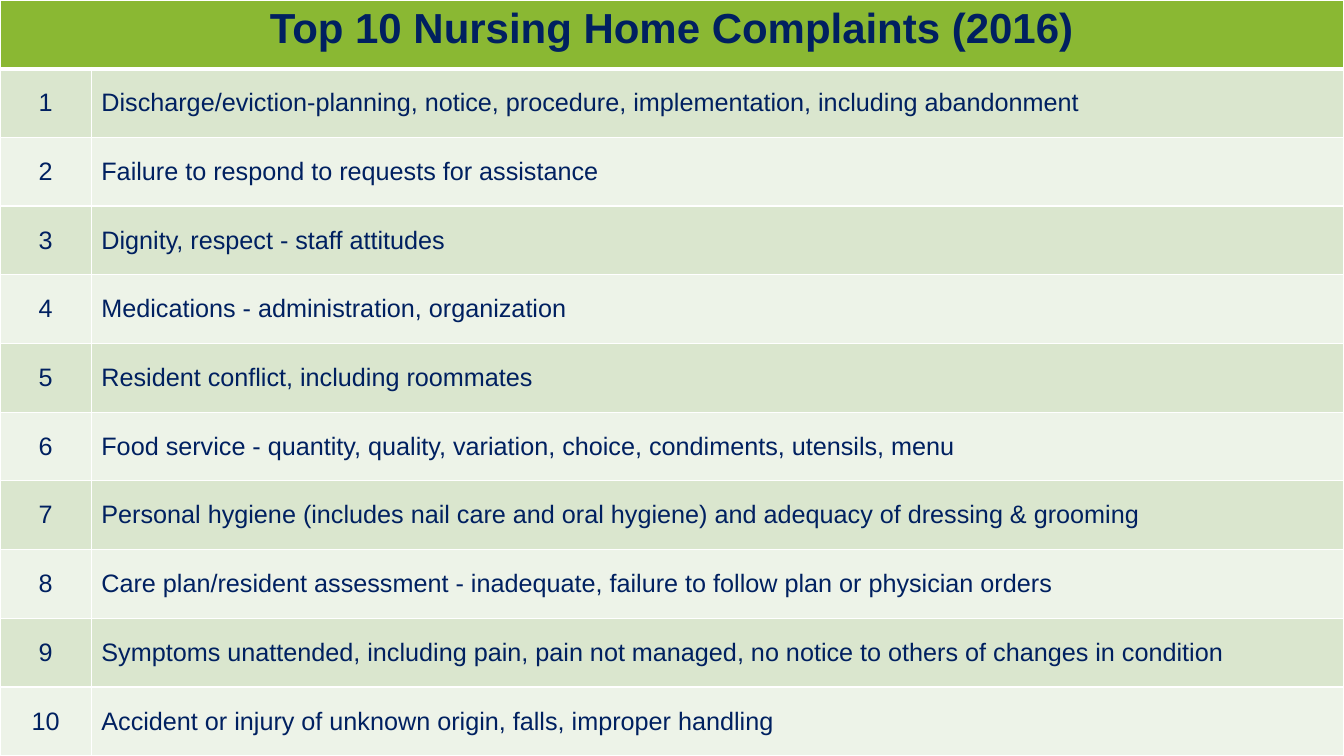
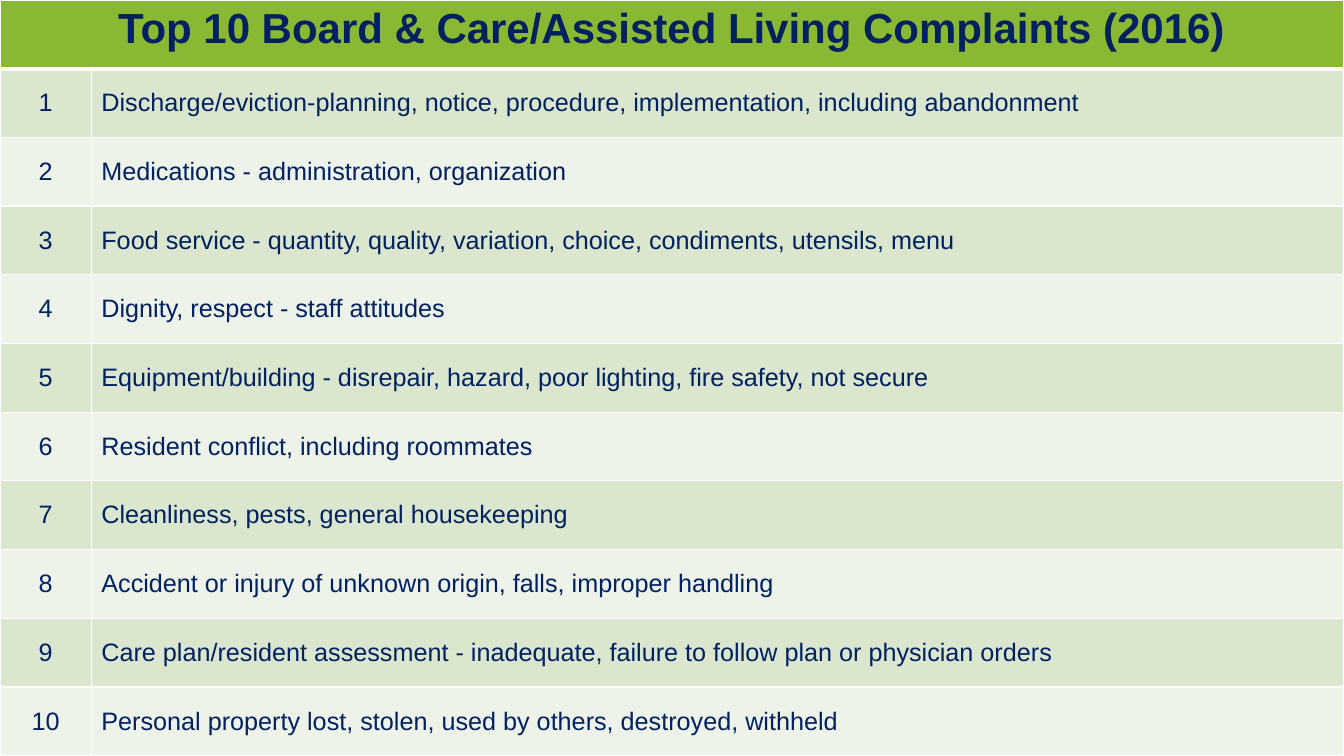
"""Build two slides that rank the most frequent care complaints as full-slide tables."""
from lxml import etree
from pptx import Presentation
from pptx import util as u
from pptx.dml.color import RGBColor
from pptx.enum import text
from pptx.oxml import ns

SLIDE_WIDTH, SLIDE_HEIGHT = 1280, 720
RANK_WIDTH = 87
NAVY, GREEN, WHITE = "002060", "8AB833", "FFFFFF"
BANDS = ("DAE6CE", "EDF3E8")
THIN, THICK = 1, 3

HEADER_FONT = {"name": "Arial", "size": u.Pt(30), "bold": True}
BODY_FONT = {"name": "Arial", "size": u.Pt(18), "bold": False}
CENTER, LEFT = text.PP_ALIGN.CENTER, text.PP_ALIGN.LEFT
TOP, MIDDLE = text.MSO_ANCHOR.TOP, text.MSO_ANCHOR.MIDDLE

DISCHARGE = "Discharge/eviction-planning, notice, procedure, implementation, including abandonment"
DIGNITY = "Dignity, respect - staff attitudes"
MEDICATIONS = "Medications - administration, organization"
CONFLICT = "Resident conflict, including roommates"
FOOD = "Food service - quantity, quality, variation, choice, condiments, utensils, menu"
CARE_PLAN = "Care plan/resident assessment - inadequate, failure to follow plan or physician orders"
ACCIDENT = "Accident or injury of unknown origin, falls, improper handling"

RANKINGS = [
    ("Top 10 Nursing Home Complaints (2016)", [
        DISCHARGE,
        "Failure to respond to requests for assistance",
        DIGNITY,
        MEDICATIONS,
        CONFLICT,
        FOOD,
        "Personal hygiene (includes nail care and oral hygiene) and adequacy of dressing & grooming",
        CARE_PLAN,
        "Symptoms unattended, including pain, pain not managed, no notice to others of changes in condition",
        ACCIDENT,
    ]),
    ("Top 10 Board & Care/Assisted Living Complaints (2016)", [
        DISCHARGE,
        MEDICATIONS,
        FOOD,
        DIGNITY,
        "Equipment/building - disrepair, hazard, poor lighting, fire safety, not secure",
        CONFLICT,
        "Cleanliness, pests, general housekeeping",
        ACCIDENT,
        CARE_PLAN,
        "Personal property lost, stolen, used by others, destroyed, withheld",
    ]),
]


def px(length):
    return u.Emu(length * 9525)


def color(value):
    return RGBColor.from_string(value)


def set_borders(cell, top, bottom):
    properties = cell._tc.get_or_add_tcPr()
    widths = {"a:lnL": THIN, "a:lnR": THIN, "a:lnT": top, "a:lnB": bottom}
    for index, (tag, width) in enumerate(widths.items()):
        line = etree.Element(ns.qn(tag), w=str(u.Pt(width)))
        fill = etree.SubElement(line, ns.qn("a:solidFill"))
        etree.SubElement(fill, ns.qn("a:srgbClr"), val=WHITE)
        properties.insert(index, line)


def format_cell(cell, fill, top=THIN, bottom=THIN):
    cell.fill.solid()
    cell.fill.fore_color.rgb = color(fill)
    set_borders(cell, top, bottom)


def write_cell(cell, words, font, alignment, anchor):
    cell.vertical_anchor = anchor
    paragraph = cell.text_frame.paragraphs[0]
    paragraph.alignment = alignment
    run = paragraph.add_run()
    run.text = words
    for name, value in font.items():
        setattr(run.font, name, value)
    run.font.color.rgb = color(NAVY)


def add_ranking(slide, title, complaints):
    frame = slide.shapes.add_table(
        len(complaints) + 1, 2, 0, 0, px(SLIDE_WIDTH), px(SLIDE_HEIGHT))
    table = frame.table
    for column, width in zip(table.columns, (RANK_WIDTH, SLIDE_WIDTH - RANK_WIDTH)):
        column.width = px(width)

    for column in range(2):
        format_cell(table.cell(0, column), GREEN, bottom=THICK)
    header = table.cell(0, 0)
    header.merge(table.cell(0, 1))
    write_cell(header, title, HEADER_FONT, CENTER, TOP)

    for rank, complaint in enumerate(complaints, 1):
        for column, (words, alignment) in enumerate(((str(rank), CENTER), (complaint, LEFT))):
            cell = table.cell(rank, column)
            format_cell(cell, BANDS[(rank - 1) % 2], top=THICK if rank == 1 else THIN)
            write_cell(cell, words, BODY_FONT, alignment, MIDDLE)


def main():
    presentation = Presentation()
    presentation.slide_width = px(SLIDE_WIDTH)
    presentation.slide_height = px(SLIDE_HEIGHT)
    blank_layout = presentation.slide_layouts[6]
    for title, complaints in RANKINGS:
        add_ranking(presentation.slides.add_slide(blank_layout), title, complaints)
    presentation.save("out.pptx")


if __name__ == "__main__":
    main()
